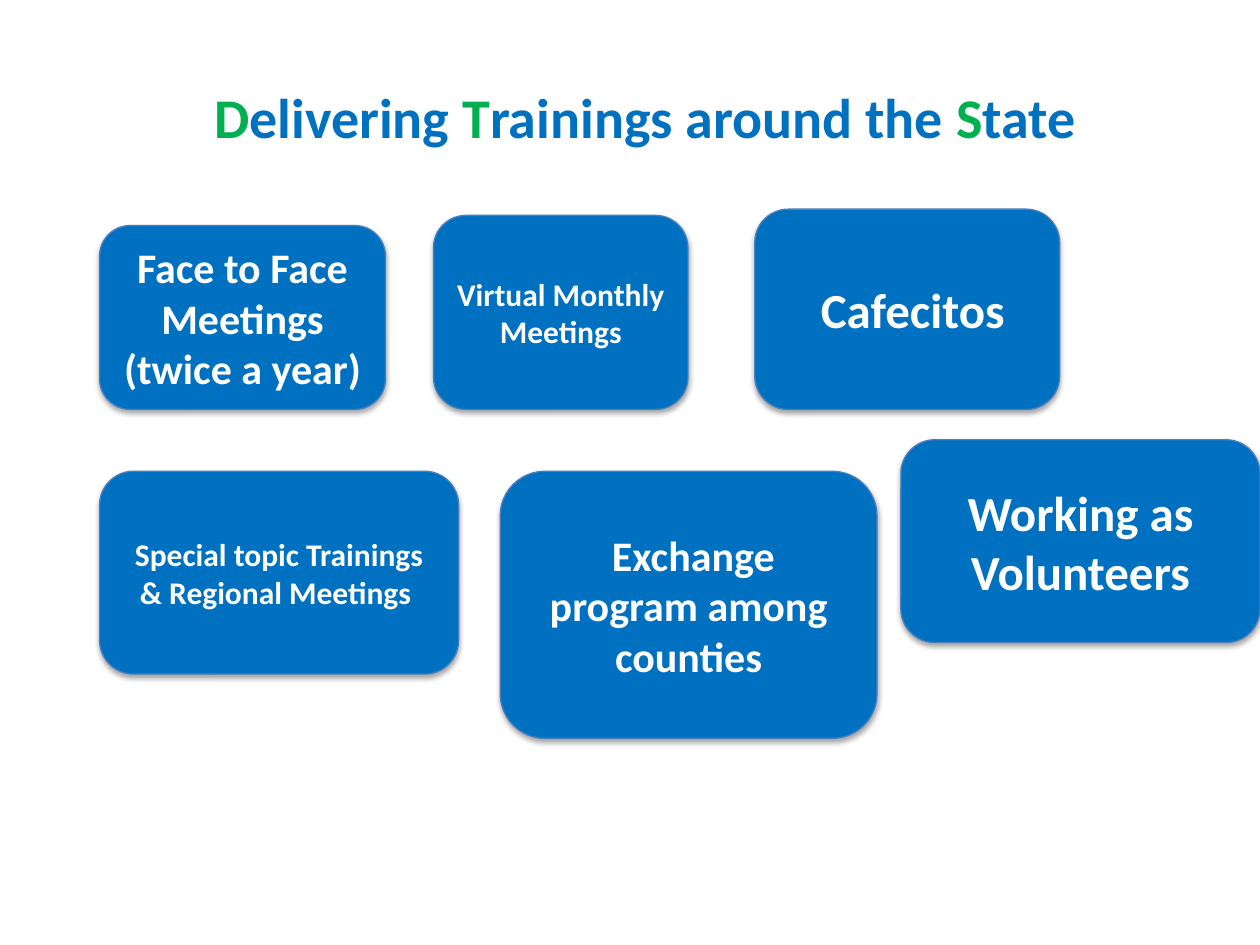
from dataclasses import dataclass

from lxml.etree import SubElement
from pptx import Presentation
from pptx.dml.color import RGBColor
from pptx.enum.shapes import MSO_SHAPE
from pptx.enum.text import MSO_ANCHOR, PP_ALIGN
from pptx.oxml.ns import qn
from pptx.util import Inches, Pt


@dataclass(frozen=True)
class Theme:
    font: str = "Calibri"
    blue: str = "0070C0"
    green: str = "00B050"
    edge: str = "4B7EBC"
    white: str = "FFFFFF"
    shade: str = "000000"
    head: int = 32
    large: int = 28
    mid: int = 24
    small: int = 18


THEME = Theme()
COLS, ROWS = 100, 75
CELL = Inches(10) // COLS


def grid(*units):
    return [round(unit * CELL) for unit in units]


def style(run, size, color):
    font = run.font
    font.name, font.size, font.bold = THEME.font, Pt(size), True
    font.color.rgb = RGBColor.from_string(color)


def center(frame):
    frame.word_wrap = True
    frame.vertical_anchor = MSO_ANCHOR.MIDDLE
    para = frame.paragraphs[0]
    para.alignment = PP_ALIGN.CENTER
    return para


def shadow(shape):
    shape.shadow.inherit = False
    effects = shape._element.spPr.find(qn("a:effectLst"))
    outer = SubElement(effects, qn("a:outerShdw"), blurRad=str(Pt(3.1)),
                       dist=str(Pt(1.8)), dir="5400000", rotWithShape="0")
    color = SubElement(outer, qn("a:srgbClr"), val=THEME.shade)
    SubElement(color, qn("a:alpha"), val="35000")


def title(slide, box, parts):
    para = center(slide.shapes.add_textbox(*grid(*box)).text_frame)
    for text, color in parts:
        run = para.add_run()
        run.text = text
        style(run, THEME.head, color)


def card(slide, box, text, size):
    shape = slide.shapes.add_shape(MSO_SHAPE.ROUNDED_RECTANGLE, *grid(*box))
    shape.fill.solid()
    shape.fill.fore_color.rgb = RGBColor.from_string(THEME.blue)
    shape.line.color.rgb = RGBColor.from_string(THEME.edge)
    shape.line.width = Pt(0.75)
    shadow(shape)
    shape.text_frame.text = text
    para = center(shape.text_frame)
    style(para.runs[0], size, THEME.white)


def upper(slide, box):
    left, top, width, height = box
    items = [
        (0, 22.7, 14.6, "Face to Face Meetings (twice a year)", THEME.mid),
        (26.5, 20.2, 15.4, "Virtual Monthly Meetings", THEME.small),
        (width - 24.2, 24.2, height, " Cafecitos", THEME.large),
    ]
    for col, wide, tall, text, size in items:
        card(slide, (left + col, top + height - tall, wide, tall), text, size)


def lower(slide, box):
    left, top, width, height = box
    wide, tall, drop = 28.5, 16.1, 2.5
    items = [
        (0, drop, wide, tall,
         "Special topic Trainings & Regional Meetings ", THEME.small),
        (31.8, drop, 29.9, height - drop,
         " Exchange program among counties", THEME.mid),
        (width - wide, 0, wide, tall, "Working as Volunteers", THEME.large),
    ]
    for col, row, span, rise, text, size in items:
        card(slide, (left + col, top + row, span, rise), text, size)


def main():
    deck = Presentation()
    deck.slide_width, deck.slide_height = grid(COLS, ROWS)
    slide = deck.slides.add_slide(deck.slide_layouts[6])
    edge = 7.9
    title(slide, (6.7, 3, 90, 12.5), [
        ("D", THEME.green), ("elivering ", THEME.blue),
        ("T", THEME.green), ("rainings around the ", THEME.blue),
        ("S", THEME.green), ("tate ", THEME.blue),
    ])
    upper(slide, (edge, 16.6, 76.2, 15.9))
    lower(slide, (edge, 34.9, COLS - edge, 23.7))
    deck.save("out.pptx")


if __name__ == "__main__":
    main()
